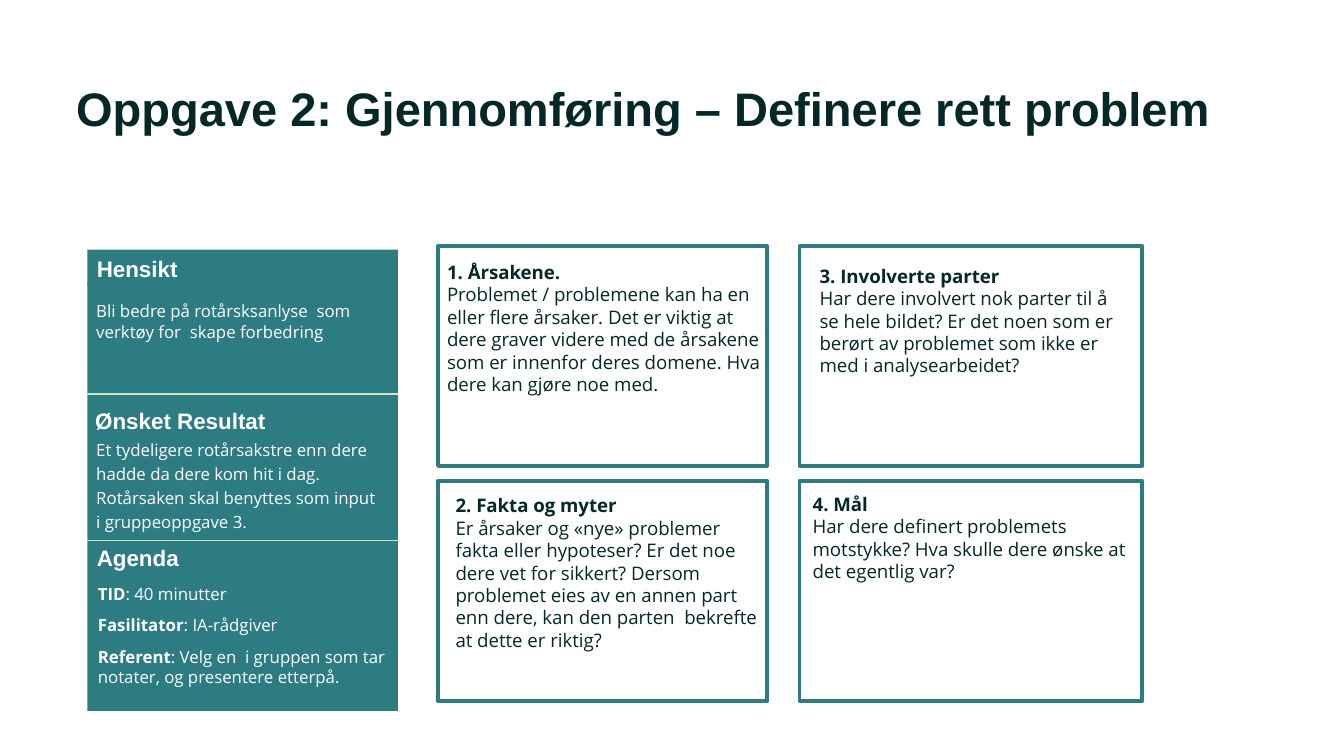
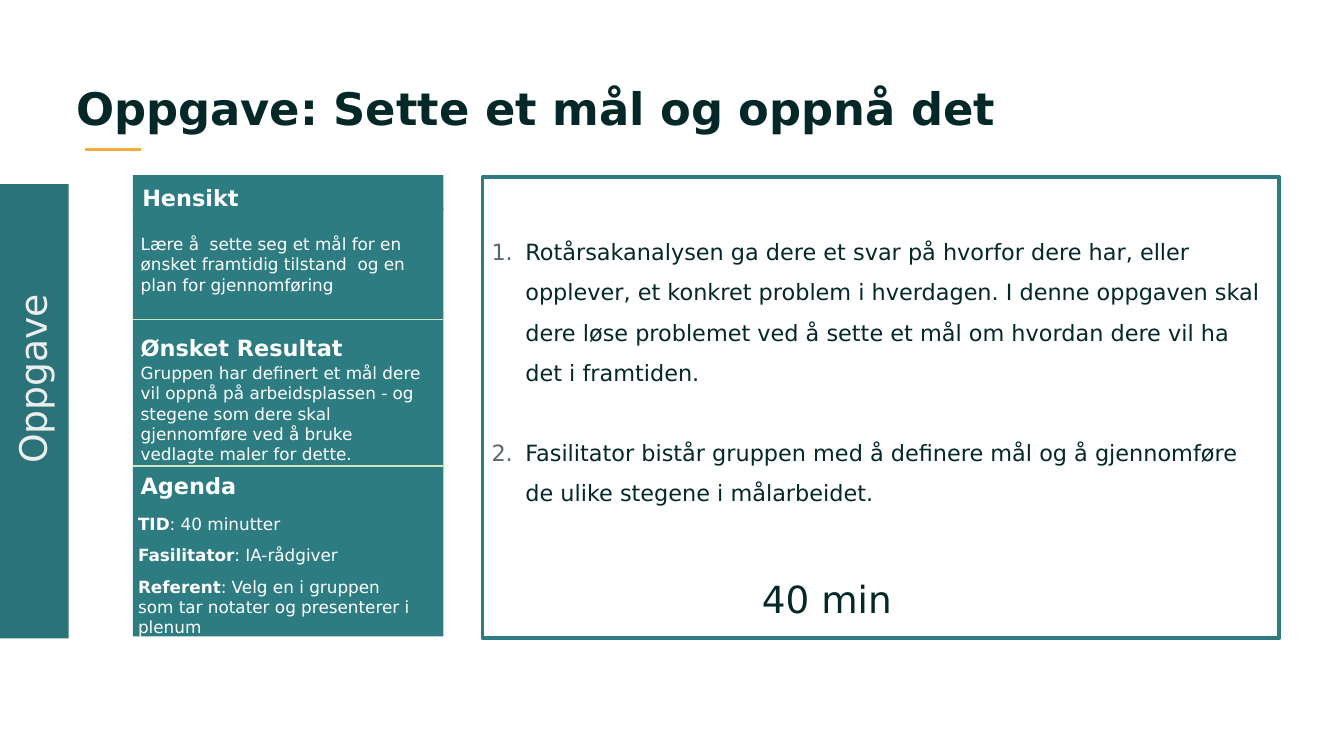
from lxml import etree
from pptx import Presentation
from pptx.dml.color import RGBColor
from pptx.enum.shapes import MSO_CONNECTOR, MSO_SHAPE
from pptx.enum.text import MSO_ANCHOR, MSO_AUTO_SIZE, PP_ALIGN
from pptx.oxml.ns import qn
from pptx.util import Cm, Pt

RECT = MSO_SHAPE.RECTANGLE
STRAIGHT = MSO_CONNECTOR.STRAIGHT
BOTTOM, MIDDLE, TOP = MSO_ANCHOR.BOTTOM, MSO_ANCHOR.MIDDLE, MSO_ANCHOR.TOP
LEFT = PP_ALIGN.LEFT
NO_FIT = MSO_AUTO_SIZE.NONE

TEAL = RGBColor(0x2D, 0x7C, 0x81)
TAB_TEAL = RGBColor(0x2A, 0x74, 0x79)
INK = RGBColor(0x04, 0x28, 0x27)
WHITE = RGBColor(0xFF, 0xFF, 0xFF)
PALE = RGBColor(0xEE, 0xEE, 0xEE)
DIVIDER = RGBColor(0xCF, 0xE5, 0xBD)
ACCENT = RGBColor(0xF0, 0xAD, 0x3D)
NUMBER_GREY = "5B6670"

ARIAL, OPEN, DEJAVU = "Arial", "Open Sans", "DejaVu Sans"
PANEL_W, STRIP_H, BODY_TOP, BODY_H = 5.87, 0.66, 0.62, 8.1
DIVIDERS = (2.73, 5.5)
CARD_INSETS = (0.25, 0.25, 0.25, 0.25)


def style_run(r, font, size, color, bold=False):
    r.font.name = font
    r.font.size = Pt(size)
    r.font.color.rgb = color
    r.font.bold = bold


def set_insets(tf, insets):
    tf.margin_left, tf.margin_top, tf.margin_right, tf.margin_bottom = map(Cm, insets)


def add_text(s, box, lines, font, size, color, insets=(0.25, 0.13, 0.25, 0.13),
             anchor=TOP, spacing=1.0, gap=0):
    sp = s.shapes.add_textbox(*map(Cm, box))
    tf = sp.text_frame
    tf.word_wrap = True
    tf.vertical_anchor = anchor
    set_insets(tf, insets)
    for i, line in enumerate(lines):
        p = tf.paragraphs[0] if i == 0 else tf.add_paragraph()
        p.line_spacing = spacing
        p.space_before = p.space_after = Pt(gap)
        for text, bold in zip(line, (True, False)):
            if text:
                r = p.add_run()
                r.text = text
                style_run(r, font, size, color, bold)
    return sp


def add_rect(s, box, fill=None, line=None):
    sp = s.shapes.add_shape(RECT, *map(Cm, box))
    sp.shadow.inherit = False
    if fill is None:
        sp.fill.background()
    else:
        sp.fill.solid()
        sp.fill.fore_color.rgb = fill
    if line is None:
        sp.line.fill.background()
    else:
        sp.line.color.rgb = line
        sp.line.width = Pt(2)
    return sp


def add_divider(s, x, y, width):
    line = s.shapes.add_connector(STRAIGHT, Cm(x), Cm(y), Cm(x + width), Cm(y))
    line.line.color.rgb = DIVIDER
    line.line.width = Pt(0.75)
    etree.SubElement(line._element.spPr, qn("a:effectLst"))


def add_title(s, text, font, size):
    title = s.shapes.title
    title.left, title.top, title.width, title.height = map(Cm, (1.19, 1.24, 23.01, 1.6))
    tf = title.text_frame
    tf.text = text
    tf.word_wrap = True
    tf.auto_size = NO_FIT
    tf.vertical_anchor = MIDDLE
    set_insets(tf, CARD_INSETS)
    p = tf.paragraphs[0]
    p.alignment = LEFT
    style_run(p.runs[0], font, size, INK, True)


def add_panel(s, x, y, sections, heading_font, body_font):
    add_rect(s, (x, y + BODY_TOP, PANEL_W, BODY_H), TEAL)
    add_rect(s, (x, y, PANEL_W, STRIP_H), TEAL)
    for dy in DIVIDERS:
        add_divider(s, x, y + dy, PANEL_W)
    for heading, (hx, hy, hw, hh), (bx, by, bw, bh), lines, spacing, gap in sections:
        add_text(s, (x + hx, y + hy, hw, hh), [(heading, "")], heading_font, 12, WHITE,
                 (0, 0.03, 0, 0), BOTTOM, 1.15)
        add_text(s, (x + bx, y + by, bw, bh), lines, body_font, 9, WHITE,
                 spacing=spacing, gap=gap)


def add_card(s, box, inner, heading, text):
    add_rect(s, box, line=TEAL)
    dx, dy, width, height = inner
    add_text(s, (box[0] + dx, box[1] + dy, width, height),
             [(heading, ""), ("", text)], OPEN, 10, INK, CARD_INSETS)


def add_steps(s, box, steps):
    x, y, width, height = box
    add_rect(s, box, line=TEAL)
    sp = add_text(s, (x - 0.08, y - 0.08, width, height - 1.17),
                  [("", step) for step in steps], DEJAVU, 12, INK,
                  (0.25, 0.98, 0.25, 0.25), spacing=1.5)
    for i, p in enumerate(sp.text_frame.paragraphs):
        p.space_before = Pt(21 if i else 0)
        pPr = p._p.get_or_add_pPr()
        pPr.set("marL", str(Cm(0.64)))
        pPr.set("indent", str(-Cm(0.64)))
        color = etree.SubElement(pPr, qn("a:buClr"))
        etree.SubElement(color, qn("a:srgbClr"), val=NUMBER_GREY)
        etree.SubElement(pPr, qn("a:buFont"), typeface=DEJAVU)
        etree.SubElement(pPr, qn("a:buAutoNum"), type="arabicPeriod")
    add_text(s, (x + 5.03, y + 7.42, 3.86, 1.12), [("", "40 min")], DEJAVU, 20, INK)


def add_side_tab(s, x, y, width, height, text):
    add_rect(s, (x, y, width, height), TAB_TEAL)
    sp = add_text(s, (x - 1.91, y + 2.46, 5.03, 1.12), [("", text)], DEJAVU, 20.2, PALE)
    sp.rotation = 270


def add_accent(s, x, y, width, height):
    fb = s.shapes.build_freeform(Cm(x + width), Cm(y))
    corners = ((x, y), (x, y + height), (x + width, y + height))
    fb.add_line_segments([(Cm(cx), Cm(cy)) for cx, cy in corners], close=True)
    sp = fb.convert_to_shape()
    sp.shadow.inherit = False
    sp.fill.solid()
    sp.fill.fore_color.rgb = ACCENT
    sp.line.fill.background()


def build_problem_slide(s):
    add_title(s, "Oppgave 2: Gjennomføring – Definere rett problem", ARIAL, 25.2)
    add_panel(s, 1.65, 4.72, [
        ("Hensikt", (0.18, 0.03, 4.67, 0.58), (-0.08, 0.84, 5.82, 1.02),
         [("", "Bli bedre på rotårsksanlyse  som verktøy for  skape forbedring")], 1.0, 3),
        ("Ønsket Resultat", (0.15, 2.8, 3.43, 0.69), (-0.08, 3.38, 5.82, 2.08),
         [("", "Et tydeligere rotårsakstre enn dere hadde da dere kom hit i dag."),
          ("", "Rotårsaken skal benyttes som input i gruppeoppgave 3.")], 1.2, 0),
        ("Agenda", (0.18, 5.39, 4.45, 0.69), (-0.05, 6.18, 6.2, 2.24),
         [("TID", ": 40 minutter"), ("Fasilitator", ": IA-rådgiver"),
          ("Referent", ": Velg en  i gruppen som tar notater, og presentere etterpå.")],
         1.0, 3),
    ], ARIAL, OPEN)
    columns = ((8.28, 6.22), (15.11, 6.48))
    rows = (4.65, 9.09)
    cards = [
        ((-0.08, 0.03, 6.48, 3.86), "1. Årsakene.",
         "Problemet / problemene kan ha en eller flere årsaker. Det er viktig at dere "
         "graver videre med de årsakene som er innenfor deres domene. "
         "Hva dere kan gjøre noe med."),
        ((0.08, 0, 6.22, 3.86), "2. Fakta og myter",
         "Er årsaker og «nye» problemer fakta eller hypoteser? Er det noe dere vet for "
         "sikkert? Dersom problemet eies av en annen part enn dere, kan den parten  "
         "bekrefte at dette er riktig?"),
        ((0.13, 0.1, 6.35, 3.56), "3. Involverte parter",
         "Har dere involvert nok parter til å se hele bildet? Er det noen som er berørt "
         "av problemet som ikke er med i analysearbeidet?"),
        ((0, -0.03, 6.48, 3.18), "4. Mål",
         "Har dere definert problemets motstykke? Hva skulle dere ønske at det "
         "egentlig var?"),
    ]
    for i, (inner, heading, text) in enumerate(cards):
        x, width = columns[i // 2]
        add_card(s, (x, rows[i % 2], width, 4.16), inner, heading, text)


def build_goal_slide(s):
    add_title(s, "Oppgave: Sette et mål og oppnå det", DEJAVU, 24)
    add_accent(s, 1.6, 2.79, 1.07, 0.06)
    add_side_tab(s, 0, 3.48, 1.3, 8.59, "Oppgave")
    add_panel(s, 2.51, 3.31, [
        ("Hensikt", (0.18, 0.1, 4.67, 0.58), (-0.1, 0.98, 5.82, 1.42),
         [("", "Lære å  sette seg et mål for en ønsket framtidig tilstand  og en plan "
               "for gjennomføring")], 1.0, 3),
        ("Ønsket Resultat", (0.15, 2.82, 3.91, 0.69), (-0.1, 3.42, 5.82, 2.18),
         [("", "Gruppen har definert et mål dere vil oppnå på arbeidsplassen - og "
               "stegene som dere skal gjennomføre ved å bruke vedlagte maler for "
               "dette.")], 1.0, 3),
        ("Agenda", (0.15, 5.43, 4.45, 0.69), (-0.15, 6.27, 5.82, 2.62),
         [("TID", ": 40 minutter"), ("Fasilitator", ": IA-rådgiver"),
          ("Referent", ": Velg en i gruppen som tar notater og presenterer i plenum")],
         1.0, 3),
    ], DEJAVU, DEJAVU)
    add_steps(s, (9.12, 3.35, 15.06, 8.71), [
        "Rotårsakanalysen ga dere et svar på hvorfor dere har, eller opplever, et "
        "konkret problem i hverdagen. I denne oppgaven skal dere løse problemet ved å "
        "sette et mål om hvordan dere vil ha det i framtiden.",
        "Fasilitator bistår gruppen med å definere mål og å gjennomføre de ulike "
        "stegene i målarbeidet.",
    ])


def main():
    prs = Presentation()
    prs.slide_width, prs.slide_height = Cm(25.4), Cm(14.29)
    for build in (build_problem_slide, build_goal_slide):
        build(prs.slides.add_slide(prs.slide_layouts[5]))
    prs.save("out.pptx")


if __name__ == "__main__":
    main()
